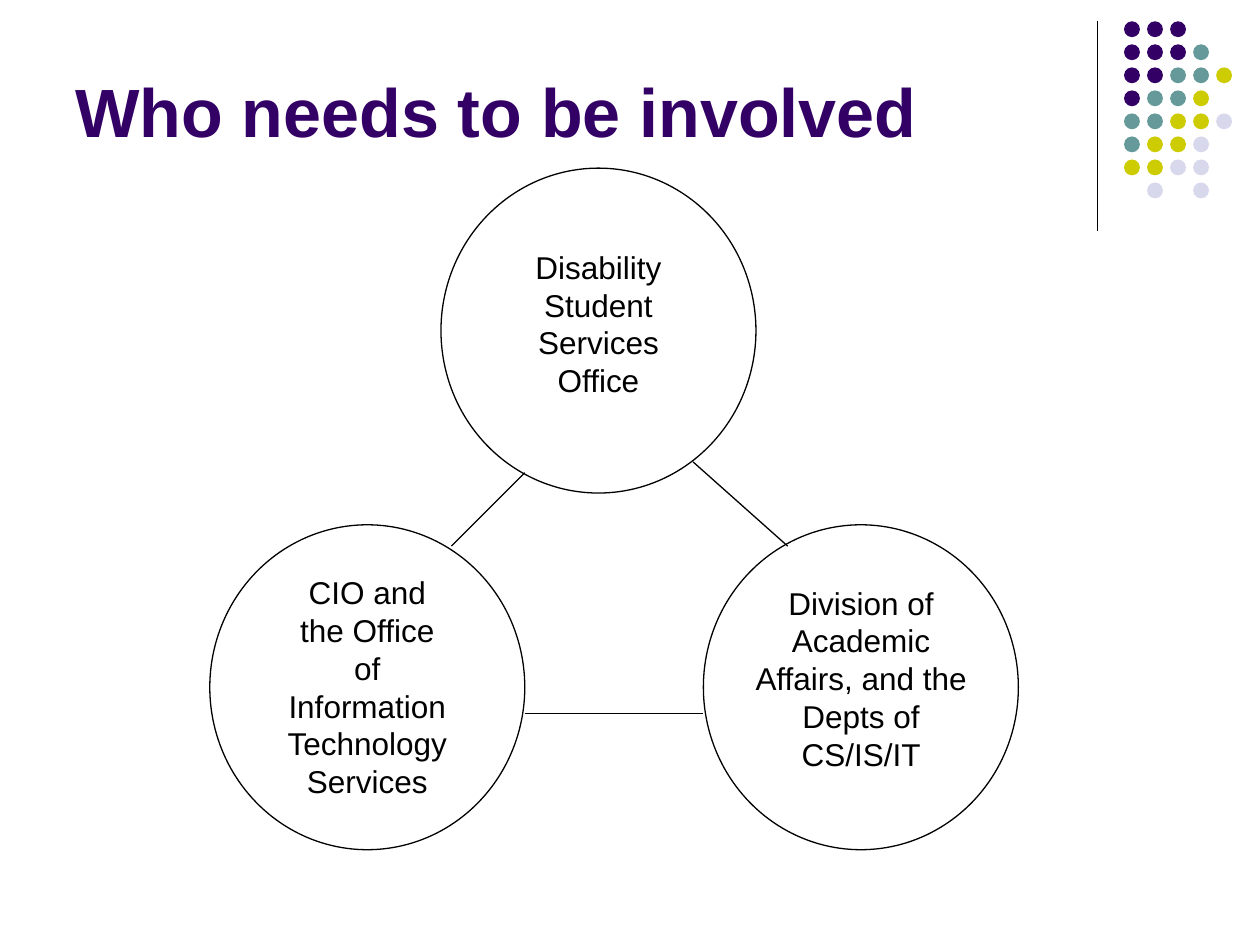
import pptx
import pptx.dml.color
import pptx.enum.shapes
import pptx.enum.text
import pptx.util
from lxml import etree
from pptx.util import Cm

COLORS = {
    "ink": "000000",
    "purple": "330066",
    "teal": "669999",
    "lime": "CCCC00",
    "mist": "D8D8EC",
}
FONT = "Arial"
LINE_WIDTH = pptx.util.Pt(0.75)

DOT_ROWS = ["PPP", "PPPT", "PPTTL", "PTTL", "TTLLM", "TLLM", "LLMM", " M M"]
DOT_COLORS = {"P": "purple", "T": "teal", "L": "lime", "M": "mist"}
DOT_LEFT, DOT_TOP, DOT_SIZE = 22.66, 0.43, 0.32
DOT_PITCH = 3.25 / 7

CIRCLE_WIDTH, CIRCLE_HEIGHT = 6.35, 6.55
# Circle left and top, label box (left, top, width, height), label
PARTIES = [
    (14.18, 10.58, (14.82, 11.64, 5.08, 4.11),
     "Division of Academic Affairs, and the Depts of CS/IS/IT"),
    (8.89, 3.39, (9.95, 4.87, 4.23, 3.3), "Disability Student Services Office"),
    (4.23, 10.58, (5.5, 11.43, 3.81, 4.83),
     "CIO and the Office of Information Technology Services"),
]
LINKS = [
    (9.1, 11.01, 10.58, 9.53),
    (15.88, 11.01, 13.97, 9.31),
    (10.58, 14.39, 14.18, 14.39),
]


def rgb(name):
    return pptx.dml.color.RGBColor.from_string(COLORS[name])


def add_ellipse(shapes, left, top, width, height):
    ellipse = shapes.add_shape(
        pptx.enum.shapes.MSO_SHAPE.OVAL, Cm(left), Cm(top), Cm(width), Cm(height))
    ellipse.shadow.inherit = False
    return ellipse


def add_line(shapes, start_x, start_y, end_x, end_y):
    line = shapes.add_connector(
        pptx.enum.shapes.MSO_CONNECTOR.STRAIGHT,
        Cm(start_x), Cm(start_y), Cm(end_x), Cm(end_y))
    line.line.color.rgb = rgb("ink")
    line.line.width = LINE_WIDTH
    properties = line._element.spPr
    etree.SubElement(properties, pptx.oxml.ns.qn("a:effectLst"))


def add_text(shapes, area, text, size, color, bold=False):
    box = shapes.add_textbox(*(Cm(length) for length in area))
    frame = box.text_frame
    frame.word_wrap = True
    frame.text = text
    font = frame.paragraphs[0].runs[0].font
    font.name = FONT
    font.size = pptx.util.Pt(size)
    font.bold = bold
    font.color.rgb = rgb(color)
    return frame


def add_dot_pattern(shapes):
    group = shapes.add_group_shape()
    for row, codes in enumerate(DOT_ROWS):
        for column, code in enumerate(codes):
            if code == " ":
                continue
            dot = add_ellipse(
                group.shapes, DOT_LEFT + column * DOT_PITCH,
                DOT_TOP + row * DOT_PITCH, DOT_SIZE, DOT_SIZE)
            dot.fill.solid()
            dot.fill.fore_color.rgb = rgb(DOT_COLORS[code])
            dot.line.fill.background()


def add_circle(shapes, left, top):
    circle = add_ellipse(shapes, left, top, CIRCLE_WIDTH, CIRCLE_HEIGHT)
    circle.fill.background()
    circle.line.color.rgb = rgb("ink")
    circle.line.width = LINE_WIDTH


def add_label(shapes, area, text):
    frame = add_text(shapes, area, text, 18, "ink")
    frame.auto_size = pptx.enum.text.MSO_AUTO_SIZE.SHAPE_TO_FIT_TEXT
    frame.paragraphs[0].alignment = pptx.enum.text.PP_ALIGN.CENTER


def main():
    deck = pptx.Presentation()
    deck.slide_width, deck.slide_height = Cm(25.4), Cm(19.05)
    page = deck.slides.add_slide(deck.slide_layouts[6])
    shapes = page.shapes

    add_line(shapes, 22.12, 0.43, 22.12, 4.65)
    add_dot_pattern(shapes)
    title = add_text(shapes, (1.27, 0.33, 20.96, 2.84),
                     "Who needs to be involved", 39, "purple", bold=True)
    title.vertical_anchor = pptx.enum.text.MSO_ANCHOR.BOTTOM

    for left, top, _, _ in PARTIES:
        add_circle(shapes, left, top)
    for _, _, area, text in PARTIES:
        add_label(shapes, area, text)
    for link in LINKS:
        add_line(shapes, *link)

    deck.save("out.pptx")


if __name__ == "__main__":
    main()
